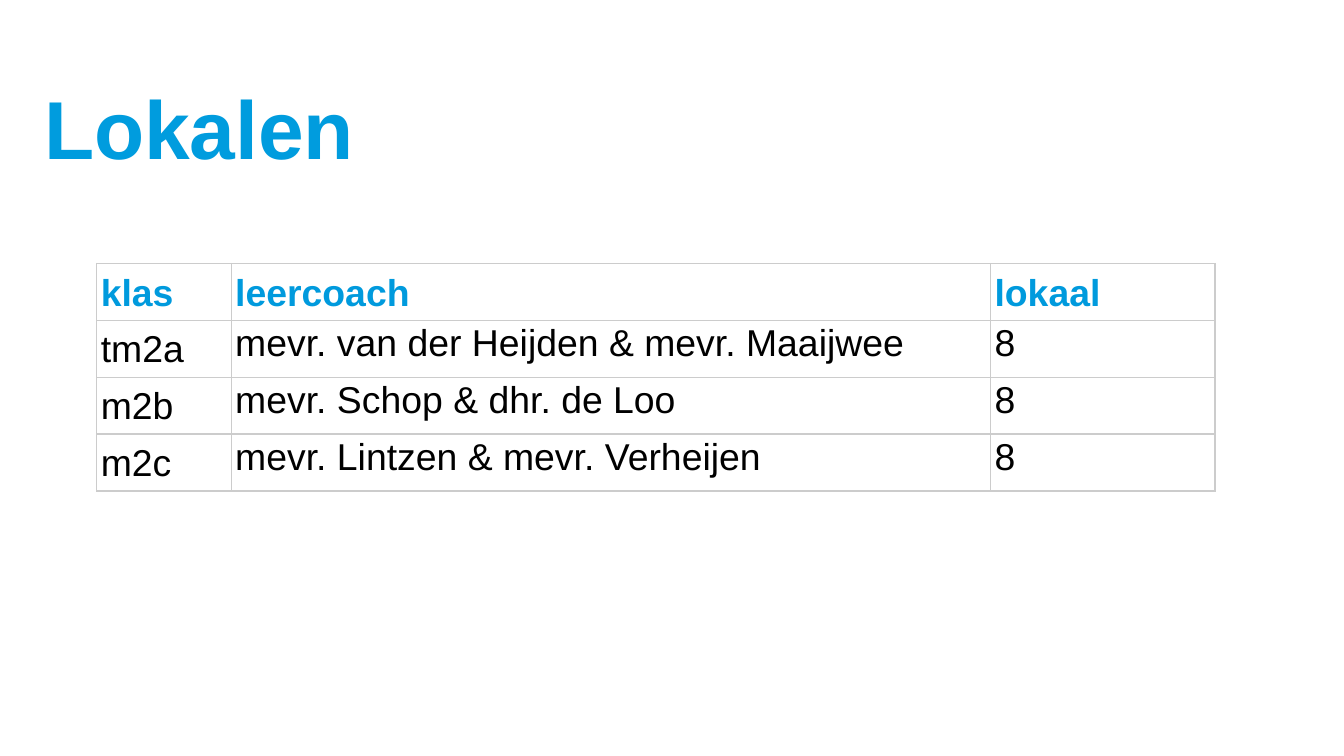
from typing import NamedTuple

from lxml import etree
from pptx import Presentation
from pptx.dml.color import RGBColor
from pptx.enum.text import MSO_ANCHOR
from pptx.oxml.ns import qn
from pptx.util import Inches, Pt

BOTTOM = MSO_ANCHOR.BOTTOM
TITLE_BLUE = RGBColor(0x00, 0x9C, 0xDE)
HEADER_BLUE = RGBColor(0x00, 0x9A, 0xDD)
BLACK = RGBColor(0x00, 0x00, 0x00)
BORDER_GREY = RGBColor(0xCC, 0xCC, 0xCC)
FONT = "Arial"
SLIDE_WIDTH = 10
COLUMN_WIDTHS = (1, 5.65, 1.67)
TABLE_HEIGHT = 1.66


class ClassRoom(NamedTuple):
    klas: str
    leercoach: str
    lokaal: str


HEADER = ClassRoom("klas", "leercoach", "lokaal")
ROOMS = [
    ClassRoom("tm2a", "mevr. van der Heijden & mevr. Maaijwee", "8"),
    ClassRoom("m2b", "mevr. Schop & dhr. de Loo", "8"),
    ClassRoom("m2c", "mevr. Lintzen & mevr. Verheijen", "8"),
]


def style_paragraph(p, size: int, color: RGBColor, bold: bool) -> None:
    p.font.name = FONT
    p.font.size = Pt(size)
    p.font.bold = bold
    p.font.color.rgb = color


def add_borders(cell) -> None:
    """Draw a thin grey line on all four sides; borders precede the fill."""
    tc_pr = cell._tc.get_or_add_tcPr()
    for i, side in enumerate(("a:lnL", "a:lnR", "a:lnT", "a:lnB")):
        ln = etree.Element(qn(side), w=str(Pt(0.75)))
        fill = etree.SubElement(ln, qn("a:solidFill"))
        etree.SubElement(fill, qn("a:srgbClr"), val=str(BORDER_GREY))
        tc_pr.insert(i, ln)


def fill_cell(cell, text: str, is_header: bool, is_first_column: bool) -> None:
    cell.fill.background()
    cell.margin_left = cell.margin_right = Inches(0.03)
    cell.margin_top = cell.margin_bottom = Inches(0.02)
    add_borders(cell)
    p = cell.text_frame.paragraphs[0]
    p.text = text
    if is_header or is_first_column:
        p.line_spacing = 1.15
    style_paragraph(p, 20, HEADER_BLUE if is_header else BLACK, is_header)


def add_title(slide, text: str) -> None:
    sp = slide.shapes.add_textbox(Inches(0.23), Inches(0.54), Inches(9.14), Inches(0.82))
    tf = sp.text_frame
    tf.word_wrap = True
    tf.vertical_anchor = BOTTOM
    p = tf.paragraphs[0]
    p.text = text
    style_paragraph(p, 44, TITLE_BLUE, True)


def add_room_table(slide, rows: list[ClassRoom]) -> None:
    table = slide.shapes.add_table(
        len(rows), len(COLUMN_WIDTHS), Inches(0.72), Inches(1.96),
        Inches(sum(COLUMN_WIDTHS)), Inches(TABLE_HEIGHT),
    ).table
    table.first_row = table.horz_banding = False
    for column, width in zip(table.columns, COLUMN_WIDTHS):
        column.width = Inches(width)
    for r, room in enumerate(rows):
        table.rows[r].height = Inches(TABLE_HEIGHT / len(rows))
        for c, text in enumerate(room):
            fill_cell(table.cell(r, c), text, r == 0, c == 0)


def main() -> None:
    prs = Presentation()
    prs.slide_width = Inches(SLIDE_WIDTH)
    prs.slide_height = Inches(SLIDE_WIDTH * 9 / 16)
    slide = prs.slides.add_slide(prs.slide_layouts[6])
    add_title(slide, "Lokalen")
    add_room_table(slide, [HEADER, *ROOMS])
    prs.save("out.pptx")


if __name__ == "__main__":
    main()
